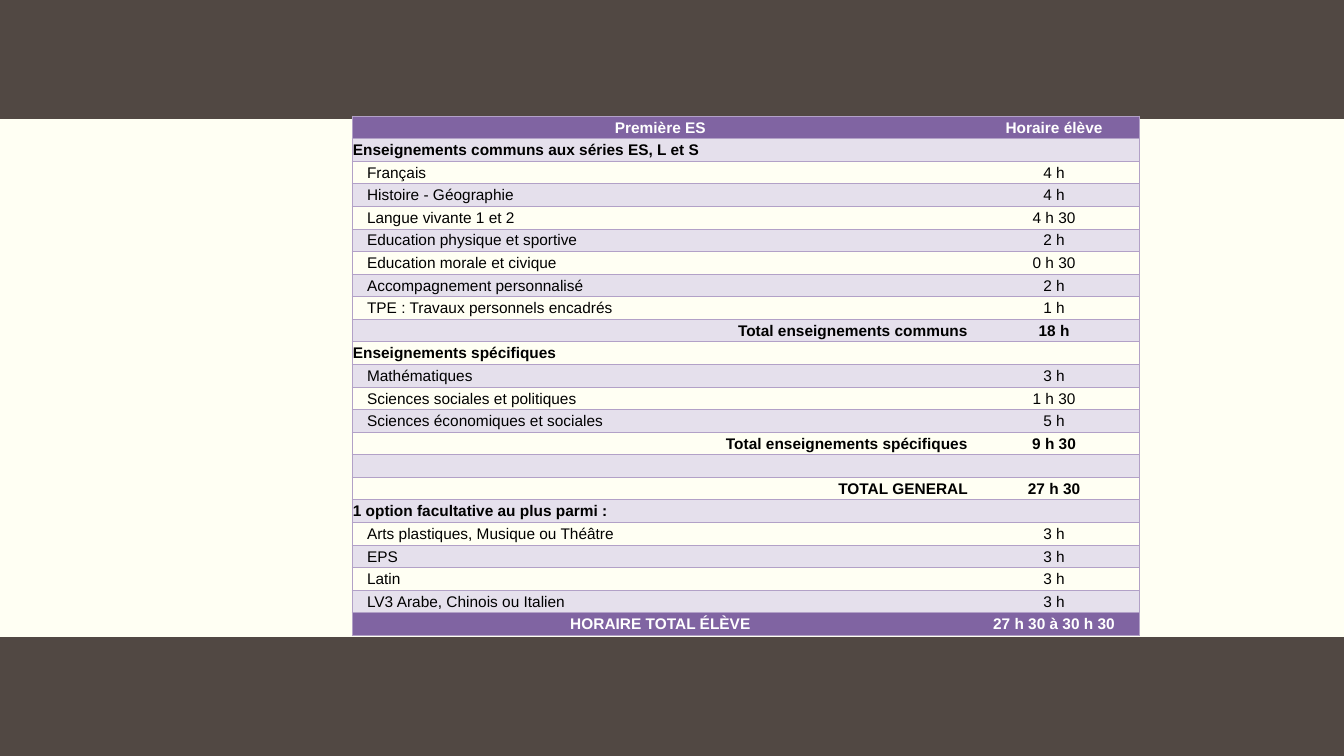
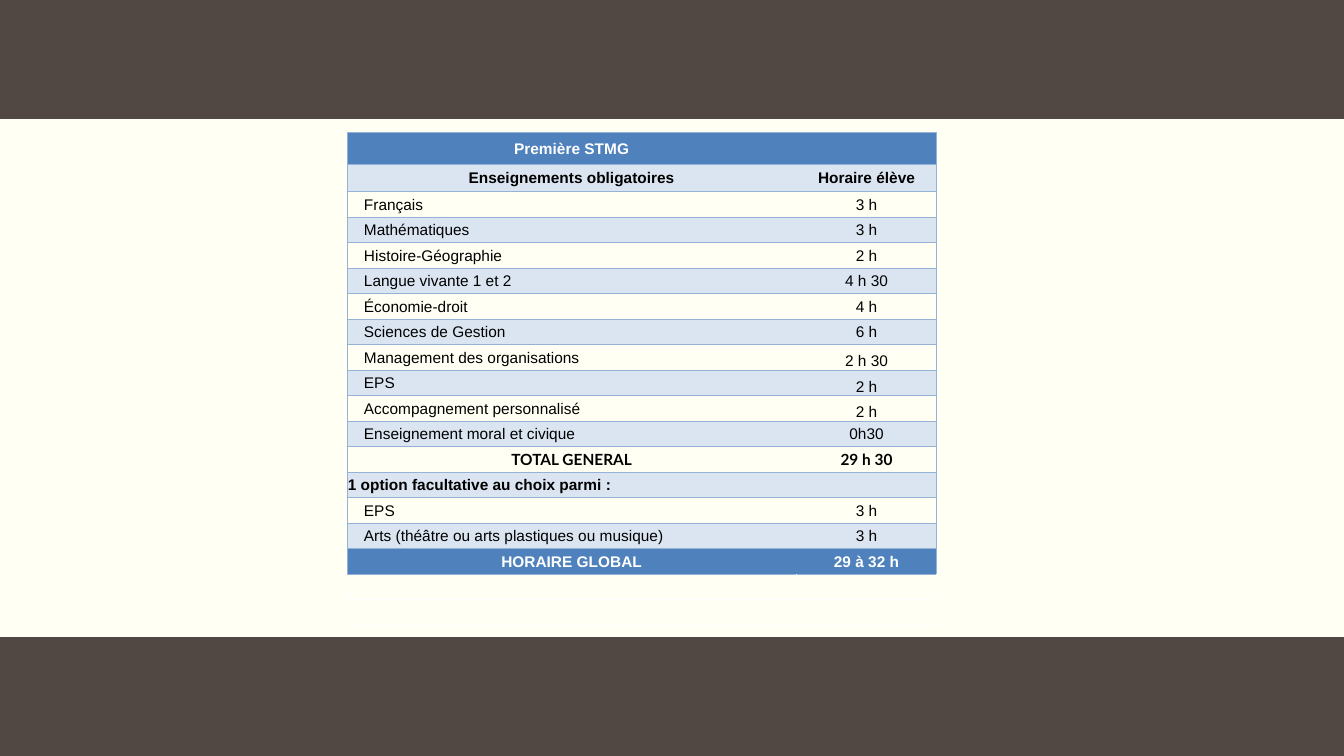
from dataclasses import dataclass
from enum import Enum

from lxml.etree import SubElement
from pptx import Presentation
from pptx.dml.color import RGBColor
from pptx.enum.shapes import MSO_SHAPE as Preset
from pptx.enum.text import MSO_ANCHOR as Anchor, PP_ALIGN as Align
from pptx.oxml.ns import qn
from pptx.util import Inches, Pt


@dataclass(frozen=True)
class Theme:
    background: str = "FFFFF3"
    band: str = "514843"
    ink: str = "000000"
    white: str = "FFFFFF"
    font: str = "Arial"
    total_font: str = "Lato"
    text_size: float = 11
    rule_width: float = 0.5
    outside_width: float = 1
    width: float = 13.33
    height: float = 7.5
    band_height: float = 1.18
    inset: float = 0.01


THEME = Theme()


@dataclass(frozen=True)
class RowStyle:
    align: Align = Align.LEFT
    bold: bool = True
    indented: bool = False
    accented: bool = False
    outside: bool = False


class Kind(Enum):
    HEADING = RowStyle(Align.CENTER, accented=True)
    SUBHEADING = RowStyle(Align.CENTER)
    SECTION = RowStyle()
    COURSE = RowStyle(bold=False, indented=True)
    TOTAL = RowStyle(Align.RIGHT)
    OUTSIDE = RowStyle(outside=True)


@dataclass(frozen=True)
class Row:
    kind: Kind
    label: str = ""
    hours: str = ""
    hours_anchor: Anchor = Anchor.MIDDLE
    font: str = THEME.font


@dataclass(frozen=True)
class Schedule:
    left: float
    top: float
    height: float
    columns: tuple[float, float]
    first_rows: tuple[float, ...]
    indent: float
    accent: str
    tint: str
    rule: str
    rows: list[Row]


def courses(*entries: tuple[str, str], anchor: Anchor = Anchor.MIDDLE) -> list[Row]:
    return [Row(Kind.COURSE, label, hours, anchor) for label, hours in entries]


ES_SCHEDULE = Schedule(
    left=3.49, top=1.15, height=5.16, columns=(6.12, 1.69), first_rows=(),
    indent=0.15, accent="8064A2", tint="E5E0EC", rule="B2A1C7",
    rows=[
        Row(Kind.HEADING, "Première ES", "Horaire élève"),
        Row(Kind.SECTION, "Enseignements communs aux séries ES, L et S"),
        *courses(
            ("Français", "4 h"),
            ("Histoire - Géographie", "4 h"),
            ("Langue vivante 1 et 2", "4 h 30"),
            ("Education physique et sportive", "2 h"),
            ("Education morale et civique", "0 h 30"),
            ("Accompagnement personnalisé", "2 h"),
            ("TPE : Travaux personnels encadrés", "1 h"),
        ),
        Row(Kind.TOTAL, "Total enseignements communs", "18 h"),
        Row(Kind.SECTION, "Enseignements spécifiques"),
        *courses(
            ("Mathématiques", "3 h"),
            ("Sciences sociales et politiques", "1 h 30"),
            ("Sciences économiques et sociales", "5 h"),
        ),
        Row(Kind.TOTAL, "Total enseignements spécifiques", "9 h 30"),
        Row(Kind.SECTION),
        Row(Kind.TOTAL, "TOTAL GENERAL", "27 h 30"),
        Row(Kind.SECTION, "1 option facultative au plus parmi :"),
        *courses(
            ("Arts plastiques, Musique ou Théâtre", "3 h"),
            ("EPS", "3 h"),
            ("Latin", "3 h"),
            ("LV3 Arabe, Chinois ou Italien", "3 h"),
        ),
        Row(Kind.HEADING, "HORAIRE TOTAL ÉLÈVE", "27 h 30 à 30 h 30"),
    ],
)

STMG_SCHEDULE = Schedule(
    left=3.44, top=1.31, height=4.9, columns=(4.46, 1.39), first_rows=(0.32, 0.27),
    indent=0.17, accent="4F81BD", tint="DBE5F1", rule="95B3D7",
    rows=[
        Row(Kind.HEADING, "Première STMG"),
        Row(Kind.SUBHEADING, "Enseignements obligatoires", "Horaire élève"),
        *courses(
            ("Français", "3 h"),
            ("Mathématiques", "3 h"),
            ("Histoire-Géographie", "2 h"),
            ("Langue vivante 1 et 2", "4 h 30"),
            ("Économie-droit", "4 h"),
            ("Sciences de Gestion", "6 h"),
        ),
        *courses(
            ("Management des organisations", "2 h 30"),
            ("EPS", "2 h"),
            ("Accompagnement personnalisé", "2 h"),
            anchor=Anchor.BOTTOM,
        ),
        *courses(("Enseignement moral et civique", "0h30")),
        Row(Kind.SUBHEADING, "TOTAL GENERAL", "29 h 30", font=THEME.total_font),
        Row(Kind.SECTION, "1 option facultative au choix parmi :"),
        *courses(
            ("EPS", "3 h"),
            ("Arts (théâtre ou arts plastiques ou musique)", "3 h"),
        ),
        Row(Kind.HEADING, "HORAIRE GLOBAL", "29 à 32 h"),
        Row(Kind.OUTSIDE),
        Row(Kind.OUTSIDE),
    ],
)


def paint(fill, color: str) -> None:
    fill.solid()
    fill.fore_color.rgb = RGBColor.from_string(color)


def dress_master(presentation, slide) -> None:
    master = presentation.slide_master
    paint(master.background.fill, THEME.background)
    for number, top in enumerate((THEME.height - THEME.band_height, 0)):
        band = slide.shapes.add_shape(
            Preset.RECTANGLE, 0, Inches(top), Inches(THEME.width), Inches(THEME.band_height)
        )
        band.shadow.inherit = False
        paint(band.fill, THEME.band)
        band.line.fill.background()
        band.element.nvSpPr.cNvPr.set("id", str(20 + number))
        master.shapes.element.append(band.element)


def set_border(cell, side: str, color: str | None, width: float) -> None:
    line = SubElement(cell._tc.get_or_add_tcPr(), qn(f"a:ln{side}"), w=str(Pt(width)))
    if color is None:
        SubElement(line, qn("a:noFill"))
    else:
        fill = SubElement(line, qn("a:solidFill"))
        SubElement(fill, qn("a:srgbClr"), val=color)


def set_borders(cell, schedule: Schedule, row_index: int, column: int) -> None:
    outside = schedule.rows[row_index].kind.value.outside
    below_table = outside and not schedule.rows[row_index - 1].kind.value.outside
    for side in "LRTB":
        if outside and not (below_table and side == "T"):
            set_border(cell, side, THEME.white, THEME.outside_width)
        elif side == "RL"[column]:
            set_border(cell, side, None, THEME.rule_width)
        else:
            set_border(cell, side, schedule.rule, THEME.rule_width)


def set_cell_text(cell, text: str, align: Align, row: Row) -> None:
    paragraph = cell.text_frame.paragraphs[0]
    if not text:
        SubElement(paragraph._p, qn("a:endParaRPr"), sz=str(int(THEME.text_size * 100)))
        return
    style = row.kind.value
    paragraph.text = text
    paragraph.alignment = align
    font = paragraph.runs[0].font
    font.name = row.font
    font.size = Pt(THEME.text_size)
    font.bold = style.bold
    font.color.rgb = RGBColor.from_string(THEME.white if style.accented else THEME.ink)


def format_cell(cell, schedule: Schedule, row_index: int, column: int) -> None:
    row = schedule.rows[row_index]
    style = row.kind.value
    indented = style.indented and column == 0
    cell.margin_left = Inches(schedule.indent if indented else THEME.inset)
    cell.margin_right = cell.margin_top = Inches(THEME.inset)
    cell.margin_bottom = 0
    cell.vertical_anchor = row.hours_anchor if column else Anchor.MIDDLE
    set_borders(cell, schedule, row_index, column)
    if style.accented:
        paint(cell.fill, schedule.accent)
    elif row_index % 2 and not style.outside:
        paint(cell.fill, schedule.tint)
    else:
        cell.fill.background()
    text, align = (row.hours, Align.CENTER) if column else (row.label, style.align)
    set_cell_text(cell, text, align, row)


def draw_schedule(slide, schedule: Schedule) -> None:
    count = len(schedule.rows)
    regular_count = count - len(schedule.first_rows)
    regular = (schedule.height - sum(schedule.first_rows)) / regular_count
    heights = [*schedule.first_rows, *[regular] * regular_count]
    table = slide.shapes.add_table(
        count, len(schedule.columns), Inches(schedule.left), Inches(schedule.top),
        Inches(sum(schedule.columns)), Inches(schedule.height),
    ).table
    table.first_row = table.horz_banding = False
    for column, width in enumerate(schedule.columns):
        table.columns[column].width = Inches(width)
    for row_index, height in enumerate(heights):
        table.rows[row_index].height = Inches(height)
        for column in range(len(schedule.columns)):
            format_cell(table.cell(row_index, column), schedule, row_index, column)


def main() -> None:
    presentation = Presentation()
    presentation.slide_width = Inches(THEME.width)
    presentation.slide_height = Inches(THEME.height)
    blank = presentation.slide_layouts.get_by_name("Blank")
    slides = [presentation.slides.add_slide(blank) for _ in range(2)]
    dress_master(presentation, slides[0])
    for slide, schedule in zip(slides, (ES_SCHEDULE, STMG_SCHEDULE)):
        draw_schedule(slide, schedule)
    presentation.save("out.pptx")


if __name__ == "__main__":
    main()
